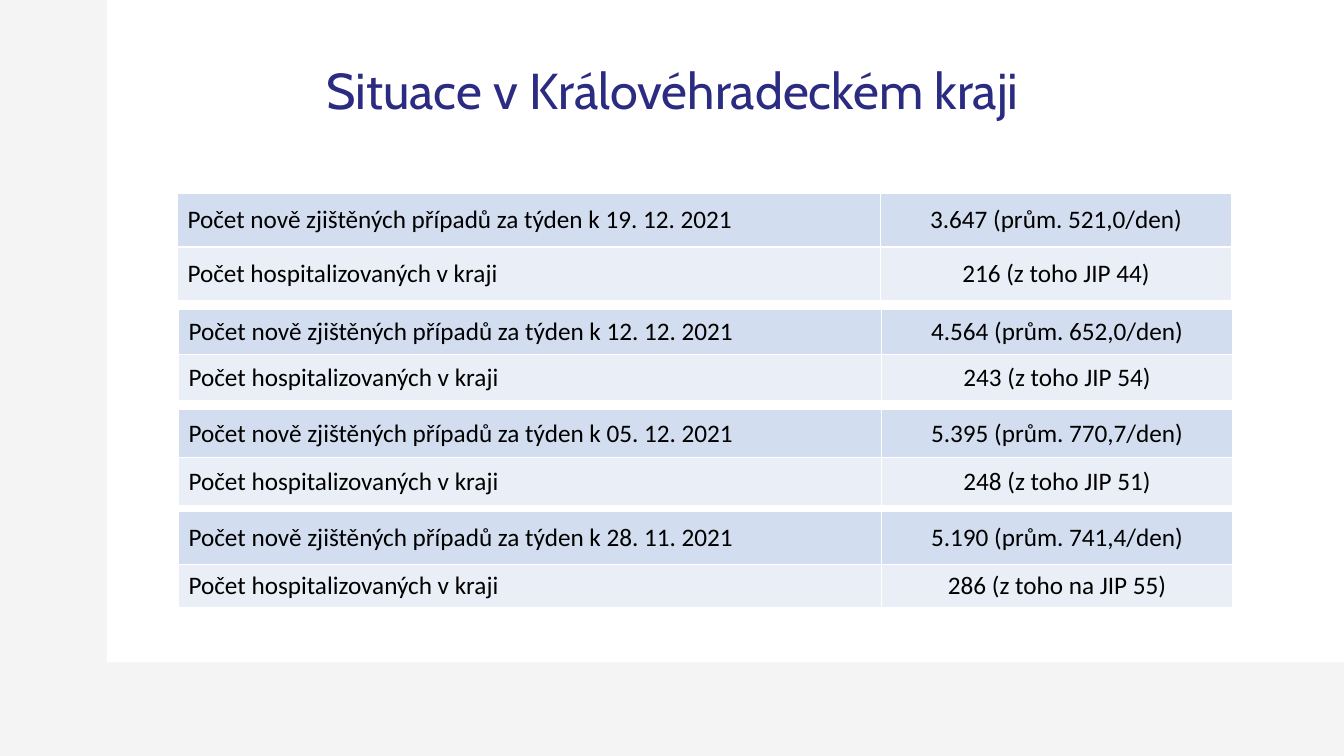
from lxml.etree import SubElement
from pptx import Presentation
from pptx.dml.color import RGBColor
from pptx.enum.shapes import MSO_SHAPE
from pptx.enum.text import MSO_ANCHOR as Anchor, PP_ALIGN as Align
from pptx.oxml.ns import qn
from pptx.util import Inches, Pt

TABLE_LEFT = 1.77
COLUMN_WIDTHS = (6.97, 3.49)
ROW_FILLS = ("D2DEEF", "EAEFF7")

# left, top, row heights, week end, new cases, hospitalized
WEEKS = [
    (1.76, 1.92, (0.53, 0.53), "19. 12. 2021", "3.647 (prům. 521,0/den)", "216 (z toho JIP 44)"),
    (TABLE_LEFT, 3.07, (0.45, 0.45), "12. 12. 2021", "4.564 (prům. 652,0/den)", "243 (z toho JIP 54)"),
    (TABLE_LEFT, 4.06, (0.48, 0.48), "05. 12. 2021", "5.395 (prům. 770,7/den)", "248 (z toho JIP 51)"),
    (TABLE_LEFT, 5.07, (0.53, 0.43), "28. 11. 2021", "5.190 (prům. 741,4/den)", "286 (z toho na JIP 55)"),
]


def paint(fill, color):
    fill.solid()
    fill.fore_color.rgb = RGBColor.from_string(color)


def write(paragraph, text, font_name, size, color, align):
    paragraph.text = text
    paragraph.alignment = align
    font = paragraph.font
    font.name = font_name
    font.size = Pt(size)
    font.color.rgb = RGBColor.from_string(color)


def add_panel(slide):
    panel = slide.shapes.add_shape(
        MSO_SHAPE.RECTANGLE, Inches(1.06), 0, Inches(12.27), Inches(6.57))
    panel.shadow.inherit = False
    paint(panel.fill, "FFFFFF")
    panel.line.fill.background()


def add_title(slide, text):
    title = slide.shapes.add_textbox(Inches(0.92), Inches(0.4), Inches(11.5), Inches(1.05))
    frame = title.text_frame
    frame.word_wrap = True
    frame.vertical_anchor = Anchor.MIDDLE
    heading = frame.paragraphs[0]
    write(heading, text, "Cabin", 36, "2B2B82", Align.CENTER)
    heading.line_spacing = 0.9


def add_borders(cell, color):
    """Draw one-point lines on all sides; call before the cell is filled."""
    properties = cell._tc.get_or_add_tcPr()
    for side in ("lnL", "lnR", "lnT", "lnB"):
        line = SubElement(properties, qn(f"a:{side}"), w=str(Pt(1)))
        solid = SubElement(line, qn("a:solidFill"))
        SubElement(solid, qn("a:srgbClr"), val=color)


def add_week_table(slide, left, top, heights, week_end, cases, hospitalized):
    rows = [
        (f"Počet nově zjištěných případů za týden k {week_end}", cases),
        ("Počet hospitalizovaných v kraji", hospitalized),
    ]
    table = slide.shapes.add_table(
        len(rows), len(COLUMN_WIDTHS), Inches(left), Inches(top),
        Inches(sum(COLUMN_WIDTHS)), Inches(sum(heights))).table
    table.first_row = False
    for column, width in zip(table.columns, COLUMN_WIDTHS):
        column.width = Inches(width)
    for row, height, texts, color in zip(table.rows, heights, rows, ROW_FILLS):
        row.height = Inches(height)
        for cell, text, align in zip(row.cells, texts, (Align.LEFT, Align.CENTER)):
            add_borders(cell, "FFFFFF")
            paint(cell.fill, color)
            cell.vertical_anchor = Anchor.MIDDLE
            write(cell.text_frame.paragraphs[0], text, "Calibri", 18, "000000", align)


def main():
    deck = Presentation()
    deck.slide_width = Inches(13.33)
    deck.slide_height = Inches(7.5)
    slide = deck.slides.add_slide(deck.slide_layouts[6])
    paint(slide.background.fill, "F4F4F4")
    add_panel(slide)
    add_title(slide, "Situace v Královéhradeckém kraji")
    for week in WEEKS:
        add_week_table(slide, *week)
    deck.save("out.pptx")


if __name__ == "__main__":
    main()
